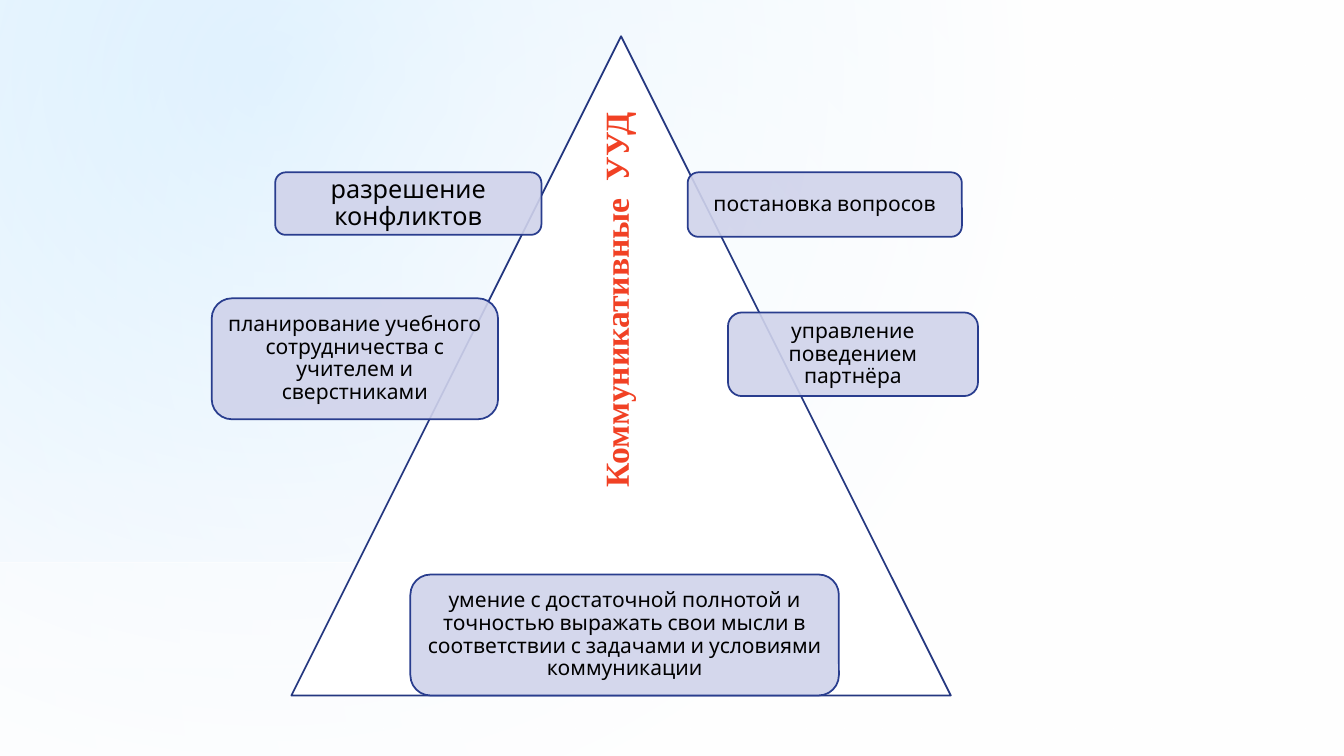
from lxml import etree
from pptx import Presentation
from pptx.dml.color import RGBColor
from pptx.enum.shapes import MSO_SHAPE
from pptx.enum.text import MSO_ANCHOR, PP_ALIGN
from pptx.oxml import parse_xml
from pptx.oxml.ns import nsdecls, qn
from pptx.util import Inches, Pt

RECT = MSO_SHAPE.RECTANGLE
ROUND = MSO_SHAPE.ROUNDED_RECTANGLE
PEAK = MSO_SHAPE.ISOSCELES_TRIANGLE
LEFT, CENTER = PP_ALIGN.LEFT, PP_ALIGN.CENTER
TOP, MIDDLE = MSO_ANCHOR.TOP, MSO_ANCHOR.MIDDLE

WHITE = RGBColor(0xFF, 0xFF, 0xFF)
BLACK = RGBColor(0, 0, 0)
SKY = RGBColor(0x9A, 0xD5, 0xFF)
LILAC = RGBColor(0xD0, 0xD3, 0xEB)
NAVY = RGBColor(0x24, 0x37, 0x80)
BLUE = RGBColor(0x29, 0x3D, 0x8E)
RED = RGBColor(0xF1, 0x41, 0x24)

ROUND_SHADE = '<a:path path="circle"><a:fillToRect l="{}" t="{}" r="{}" b="{}"/></a:path>'
MID = ROUND_SHADE.format(50000, 50000, 50000, 50000)
CORNER = ROUND_SHADE.format(20000, 10000, 80000, 90000)
DOWN = '<a:lin ang="5400000" scaled="0"/>'


def blend(props, stops, shade):
    """Swap the solid fill for a gradient of (colour, opacity) stops."""
    marks = "".join(
        f'<a:gs pos="{pos}"><a:srgbClr val="{color}">'
        f'<a:alpha val="{alpha * 1000}"/></a:srgbClr></a:gs>'
        for pos, (color, alpha) in zip((0, 100000), stops))
    grad = parse_xml(f'<a:gradFill {nsdecls("a")} rotWithShape="1">'
                     f'<a:gsLst>{marks}</a:gsLst>{shade}</a:gradFill>')
    props.replace(props.find(qn("a:solidFill")), grad)


def write(shape, *texts, font, size, color, bold=False, align=CENTER,
          anchor=MIDDLE, pad=0.06, line=0.9):
    frame = shape.text_frame
    frame.word_wrap = True
    frame.vertical_anchor = anchor
    frame.margin_left = frame.margin_right = Inches(pad)
    frame.margin_top = frame.margin_bottom = Inches(min(pad, 0.06))
    para = frame.paragraphs[0]
    para.alignment = align
    para.line_spacing = line
    for text in texts:
        run = para.add_run()
        run.text = text
        run.font.name = font
        run.font.size = Pt(size)
        run.font.bold = bold
        run.font.color.rgb = color
    return para


deck = Presentation()
deck.slide_width, deck.slide_height = Inches(13.33), Inches(7.5)
slide = deck.slides.add_slide(deck.slide_layouts[6])
shapes = slide.shapes

# Background: blue glow softened by white veils
back = slide.background.fill
back.solid()
back.fore_color.rgb = WHITE
blend(slide.element.find(".//" + qn("p:bgPr")), [(SKY, 100), (WHITE, 100)], CORNER)

veils = [(5.58, 1.92, 91, 76, MID), (0, 5.58, 89, 62, MID), (4.12, 2.5, 0, 30, DOWN)]
for top, height, start, end, shade in veils:
    veil = shapes.add_shape(RECT, 0, Inches(top), deck.slide_width, Inches(height))
    veil.shadow.inherit = False
    veil.line.fill.background()
    veil.fill.solid()
    blend(veil.element.spPr, [(WHITE, start), (WHITE, end)], shade)

# Triangle
peak = shapes.add_shape(PEAK, Inches(2.89), Inches(0.36), Inches(6.54), Inches(6.54))
peak.shadow.inherit = False
peak.fill.solid()
peak.fill.fore_color.rgb = WHITE
peak.line.color.rgb = NAVY
peak.line.width = Pt(1.25)

# Skill cards
cards = [
    (2.73, 1.71, 2.64, 0.62, 18, "разрешение конфликтов"),
    (6.82, 1.71, 2.72, 0.64, 15, "постановка вопросов"),
    (2.1, 2.96, 2.84, 1.2, 15,
     "планирование учебного сотрудничества с учителем и сверстниками"),
    (4.07, 5.7, 4.25, 1.2, 15,
     "умение с достаточной полнотой и точностью выражать свои мысли "
     "в соответствии с задачами и условиями коммуникации"),
    (7.22, 3.1, 2.48, 0.83, 15, "управление поведением партнёра"),
]
for left, top, width, height, size, text in cards:
    card = shapes.add_shape(ROUND, Inches(left), Inches(top), Inches(width), Inches(height))
    card.shadow.inherit = False
    card.fill.solid()
    card.fill.fore_color.rgb = LILAC
    tint = card.element.spPr.find(qn("a:solidFill"))[0]
    etree.SubElement(tint, qn("a:alpha"), val="90000")
    card.line.color.rgb = BLUE
    card.line.width = Pt(1.25)
    write(card, text, font="Karla", size=size, color=BLACK)

# Upright title, with a wider gap between its words
title = shapes.add_textbox(Inches(3.86), Inches(2.8), Inches(4.46), Inches(0.49))
title.rotation = 270
para = write(title, "Коммуникативные", " ", "УУД", font="Times New Roman", size=24,
             color=RED, bold=True, align=LEFT, anchor=TOP, pad=0.1, line=1.0)
para.runs[1].font._element.set("spc", "600")
para._p.get_or_add_pPr().set("marL", str(Inches(0.34)))

deck.save("out.pptx")
